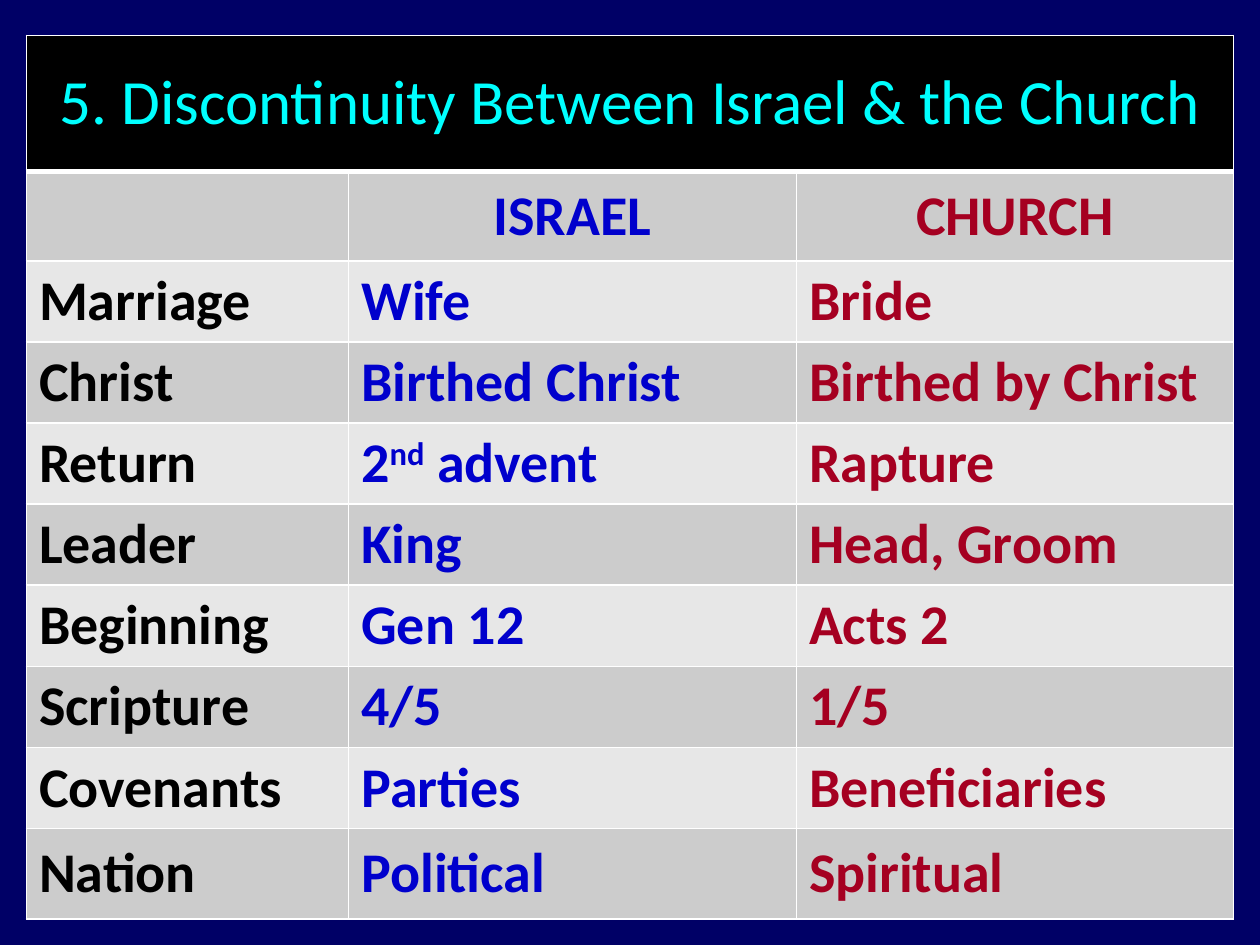
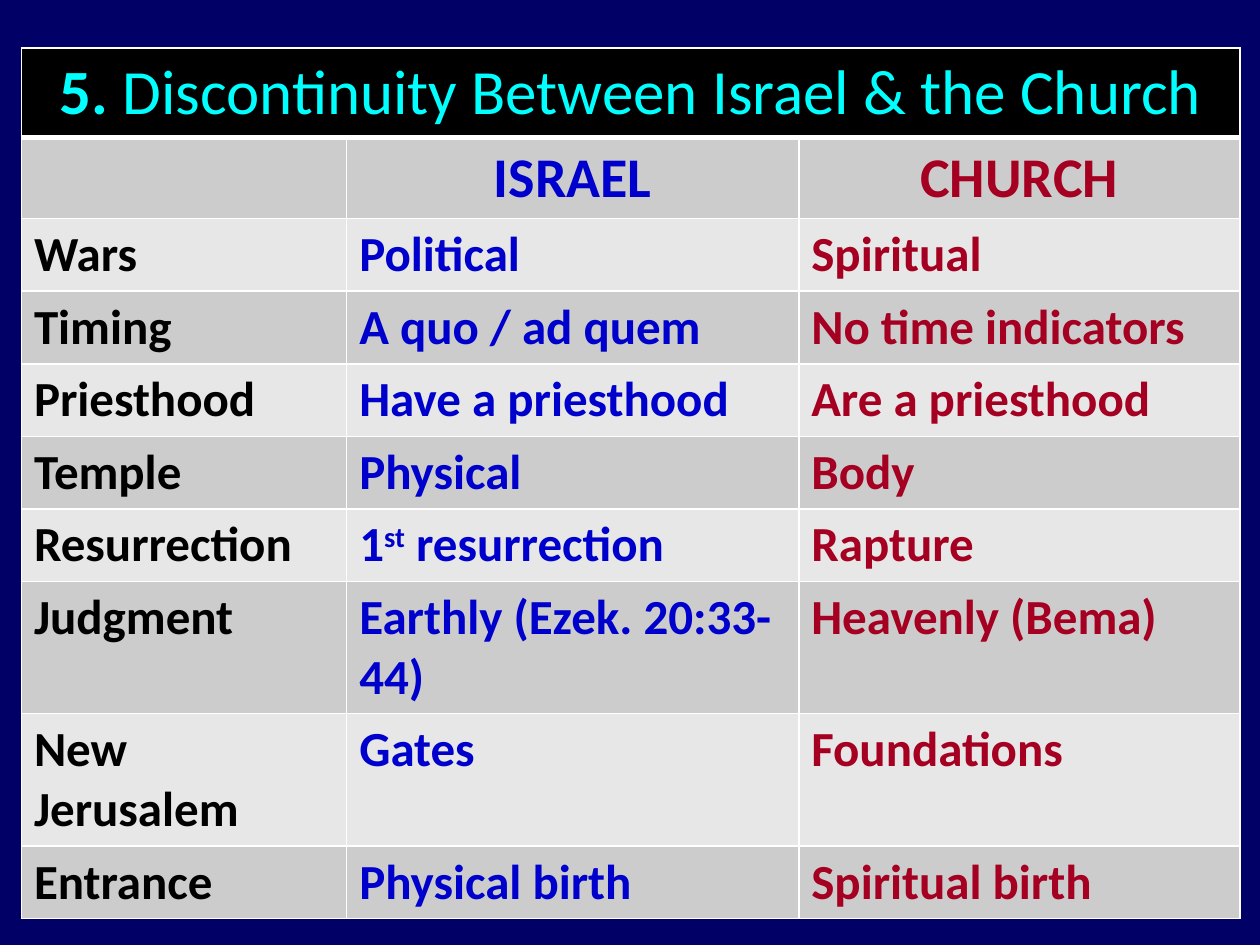
from dataclasses import dataclass

from lxml import etree
from pptx import Presentation
from pptx.dml.color import RGBColor
from pptx.enum.text import MSO_ANCHOR, PP_ALIGN
from pptx.oxml.ns import qn
from pptx.util import Inches, Pt

CENTER, LEFT = PP_ALIGN.CENTER, PP_ALIGN.LEFT
MIDDLE, TOP = MSO_ANCHOR.MIDDLE, MSO_ANCHOR.TOP

# Shared look
SLIDE_W, SLIDE_H = 10, 7.5
FONT = "Calibri"
COLORS = {
    "background": "000066",
    "title_band": "000000",
    "title": "00FFFF",
    "topic": "000000",
    "israel": "0000CC",
    "church": "A50021",
    "dark_row": "CCCCCC",
    "light_row": "E7E7E7",
    "border": "FFFFFF",
}
COLUMN_KEYS = ("topic", "israel", "church")
COLUMN_SHARES = (0.267, 0.371, 0.362)
TITLE = ("5. ", "Discontinuity Between Israel & the Church")
HEADINGS = ("", "ISRAEL", "CHURCH")
TITLE_SIZE, HEADING_SIZE = 36, 32
THIN, THICK = 1, 3


@dataclass(frozen=True)
class Comparison:
    """One table; carets in a row's text enclose a superscript."""
    left: float
    top: float
    width: float
    heights: tuple[float, ...]
    body_size: int
    body_anchor: MSO_ANCHOR
    number_bold: bool
    rows: tuple[tuple[str, str, str], ...]


COMPARISONS = (
    Comparison(
        0.21, 0.28, 9.58, (1.08, 0.71, *[0.64] * 7, 0.72), 32, MIDDLE, False,
        (
            ("Marriage", "Wife", "Bride"),
            ("Christ", "Birthed Christ", "Birthed by Christ"),
            ("Return", "2^nd^ advent", "Rapture"),
            ("Leader", "King", "Head, Groom"),
            ("Beginning", "Gen 12", "Acts 2"),
            ("Scripture", "4/5", "1/5"),
            ("Covenants", "Parties", "Beneficiaries"),
            ("Nation", "Political", "Spiritual"),
        ),
    ),
    Comparison(
        0.17, 0.38, 9.67, (0.7, 0.64, *[0.57] * 5, 1.05, 1.05, 0.57), 28, TOP, True,
        (
            ("Wars", "Political", "Spiritual"),
            ("Timing", "A quo / ad quem", "No time indicators"),
            ("Priesthood", "Have a priesthood", "Are a priesthood"),
            ("Temple", "Physical", "Body"),
            ("Resurrection", "1^st^ resurrection", "Rapture"),
            ("Judgment", "Earthly (Ezek. 20:33-44)", "Heavenly (Bema)"),
            ("New Jerusalem", "Gates", "Foundations"),
            ("Entrance", "Physical birth", "Spiritual birth"),
        ),
    ),
)


def color(key: str) -> RGBColor:
    return RGBColor.from_string(COLORS[key])


def style_cell(cell, fill_key: str, top: int = THIN, bottom: int = THIN) -> None:
    """Fill a cell and draw its four borders, widths in points."""
    cell.fill.solid()
    cell.fill.fore_color.rgb = color(fill_key)
    properties = cell._tc.get_or_add_tcPr()
    sides = {"a:lnL": THIN, "a:lnR": THIN, "a:lnT": top, "a:lnB": bottom}
    for position, (tag, width) in enumerate(sides.items()):
        line = etree.Element(qn(tag), w=str(Pt(width)))
        solid = etree.SubElement(line, qn("a:solidFill"))
        etree.SubElement(solid, qn("a:srgbClr"), val=COLORS["border"])
        properties.insert(position, line)


def write_cell(cell, pieces: tuple[str, ...] | list[str], size: int, color_key: str,
               align: PP_ALIGN, anchor: MSO_ANCHOR, bold: bool = True) -> list:
    """Write the pieces as runs of one paragraph and return the runs."""
    cell.vertical_anchor = anchor
    paragraph = cell.text_frame.paragraphs[0]
    paragraph.alignment = align
    spacing = etree.SubElement(paragraph._p.get_or_add_pPr(), qn("a:spcBef"))
    etree.SubElement(spacing, qn("a:spcPct"), val="20000")
    for piece in pieces:
        run = paragraph.add_run()
        run.text = piece
        run.font.name = FONT
        run.font.size = Pt(size)
        run.font.bold = bold
        run.font.color.rgb = color(color_key)
    return list(paragraph.runs)


def draw_comparison(slide, comparison: Comparison) -> None:
    table = slide.shapes.add_table(
        len(comparison.heights), len(COLUMN_KEYS),
        Inches(comparison.left), Inches(comparison.top),
        Inches(comparison.width), Inches(sum(comparison.heights)),
    ).table
    table.first_row = table.horz_banding = False
    for column, share in zip(table.columns, COLUMN_SHARES):
        column.width = Inches(comparison.width * share)
    for row, height in zip(table.rows, comparison.heights):
        row.height = Inches(height)

    # Title band across all columns
    for cell in table.rows[0].cells:
        style_cell(cell, "title_band", bottom=THICK)
    title_cell = table.cell(0, 0)
    title_cell.merge(table.cell(0, len(COLUMN_KEYS) - 1))
    number, _ = write_cell(title_cell, TITLE, TITLE_SIZE, "title", CENTER, MIDDLE, False)
    number.font.bold = comparison.number_bold

    # Column headings and topics on alternating greys
    for r, texts in enumerate((HEADINGS, *comparison.rows), start=1):
        heading = r == 1
        for c, (text, key) in enumerate(zip(texts, COLUMN_KEYS)):
            cell = table.cell(r, c)
            style_cell(cell, "dark_row" if r % 2 else "light_row",
                       top=THICK if heading else THIN)
            if not text:
                continue
            runs = write_cell(
                cell, text.split("^"),
                HEADING_SIZE if heading else comparison.body_size, key,
                CENTER if heading else LEFT,
                MIDDLE if heading else comparison.body_anchor,
            )
            for superscript in runs[1::2]:
                superscript.font._element.set("baseline", "30000")


def main() -> None:
    prs = Presentation()
    prs.slide_width, prs.slide_height = Inches(SLIDE_W), Inches(SLIDE_H)
    background = prs.slide_master.background.fill
    background.solid()
    background.fore_color.rgb = color("background")
    blank = prs.slide_layouts[6]
    for comparison in COMPARISONS:
        draw_comparison(prs.slides.add_slide(blank), comparison)
    prs.save("out.pptx")


if __name__ == "__main__":
    main()
